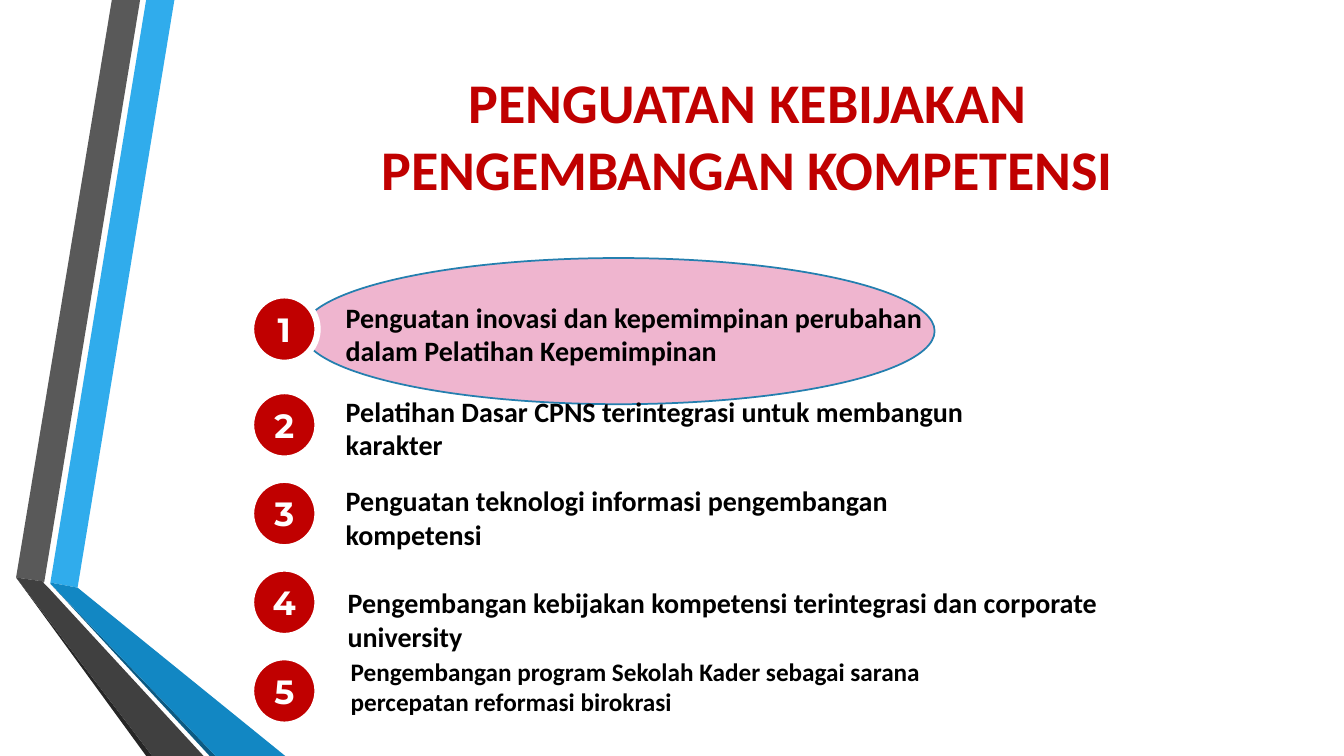
from pptx import Presentation
from pptx.dml.color import RGBColor
from pptx.enum.shapes import MSO_SHAPE
from pptx.enum.text import MSO_ANCHOR, PP_ALIGN
from pptx.util import Inches, Pt

OVAL = MSO_SHAPE.OVAL
LEFT, CENTER = PP_ALIGN.LEFT, PP_ALIGN.CENTER
TOP, MIDDLE = MSO_ANCHOR.TOP, MSO_ANCHOR.MIDDLE

COLORS = {
    "red": "C00000", "white": "FFFFFF", "black": "000000",
    "pink": "EFB5CF", "outline": "247FAF",
    "sky": "30ACEC", "blue": "1287C3", "navy": "0C5A82",
    "gray": "595959", "charcoal": "404040", "ink": "262626",
}

TITLE = "PENGUATAN KEBIJAKAN \vPENGEMBANGAN KOMPETENSI "
TITLE_BOX = (1.62, 0.01, 11.71, 2.65)
HIGHLIGHT_BOX = (3, 2.56, 6.27, 1.45)

POLICIES = [
    ("Penguatan inovasi dan kepemimpinan perubahan dalam Pelatihan Kepemimpinan",
     (3.33, 2.93, 6.64, 1.11), 20),
    ("Pelatihan Dasar CPNS terintegrasi untuk membangun karakter",
     (3.33, 3.86, 6.68, 0.77), 20),
    ("Penguatan teknologi informasi pengembangan kompetensi",
     (3.33, 4.75, 6.68, 0.77), 20),
    ("Pengembangan kebijakan kompetensi terintegrasi dan corporate university",
     (3.35, 5.76, 7.84, 0.77), 20),
    ("Pengembangan program Sekolah Kader sebagai sarana percepatan reformasi birokrasi",
     (3.38, 6.46, 6.51, 1.01), 18),
]

BADGE_LEFT, BADGE_WIDTH, BADGE_HEIGHT = 2.49, 0.66, 0.67
FIRST_BADGE_TOP, SECOND_BADGE_TOP, BADGE_PITCH = 2.93, 3.88, 0.88

RIBBONS = [
    ("sky", [(0.5, 5.78), (0.77, 5.83), (1.73, 0), (1.45, 0)]),
    ("gray", [(1.39, 0), (1.11, 0), (0.16, 5.73), (0.44, 5.77)]),
    ("ink", [(0.16, 5.73), (1.45, 7.5), (1.51, 7.5)]),
    ("navy", [(0.5, 5.79), (2.08, 7.5), (2.14, 7.5)]),
    ("blue", [(0.5, 5.79), (2.14, 7.5), (2.83, 7.5), (0.77, 5.83), (0.5, 5.78)]),
    ("charcoal", [(2.02, 7.5), (0.48, 5.83), (0.43, 5.78), (0.44, 5.77),
                  (0.16, 5.73), (1.51, 7.5)]),
]


def color(name):
    return RGBColor.from_string(COLORS[name])


def place(box):
    return [Inches(length) for length in box]


def paint(shape, fill, line=None, width=0):
    shape.shadow.inherit = False
    shape.fill.solid()
    shape.fill.fore_color.rgb = color(fill)
    if line:
        shape.line.color.rgb = color(line)
        shape.line.width = Pt(width)
    else:
        shape.line.fill.background()


def write(shape, text, size, font="Calibri", ink="black", align=LEFT, anchor=TOP, wrap=True):
    frame = shape.text_frame
    frame.word_wrap = wrap
    frame.vertical_anchor = anchor
    paragraph = frame.paragraphs[0]
    paragraph.text = text
    paragraph.alignment = align
    for run in paragraph.runs:
        run.font.name = font
        run.font.size = Pt(size)
        run.font.bold = True
        run.font.color.rgb = color(ink)


def add_ribbon(shapes, fill, points):
    units = [(x * 100, y * 100) for x, y in points]
    builder = shapes.build_freeform(*units[0], scale=Inches(0.01))
    builder.add_line_segments(units[1:], close=True)
    paint(builder.convert_to_shape(), fill)


def add_badge(shapes, number):
    top = FIRST_BADGE_TOP if number == 1 else SECOND_BADGE_TOP + (number - 2) * BADGE_PITCH
    badge = shapes.add_shape(OVAL, *place((BADGE_LEFT, top, BADGE_WIDTH, BADGE_HEIGHT)))
    paint(badge, "red", "white", 4.5)
    write(badge, str(number), 24, font="Montserrat", ink="white",
          align=CENTER, anchor=MIDDLE, wrap=False)


def main():
    presentation = Presentation()
    presentation.slide_width, presentation.slide_height = Inches(13.33), Inches(7.5)
    slide = presentation.slides.add_slide(presentation.slide_layouts[6])
    shapes = slide.shapes

    for fill, points in RIBBONS:
        add_ribbon(shapes, fill, points)

    highlight = shapes.add_shape(OVAL, *place(HIGHLIGHT_BOX))
    paint(highlight, "pink", "outline", 1.25)

    title = shapes.add_textbox(*place(TITLE_BOX))
    write(title, TITLE, 40, ink="red", align=CENTER, anchor=MIDDLE)

    for number, (text, box, size) in enumerate(POLICIES, start=1):
        add_badge(shapes, number)
        write(shapes.add_textbox(*place(box)), text, size)

    presentation.save("out.pptx")


if __name__ == "__main__":
    main()
